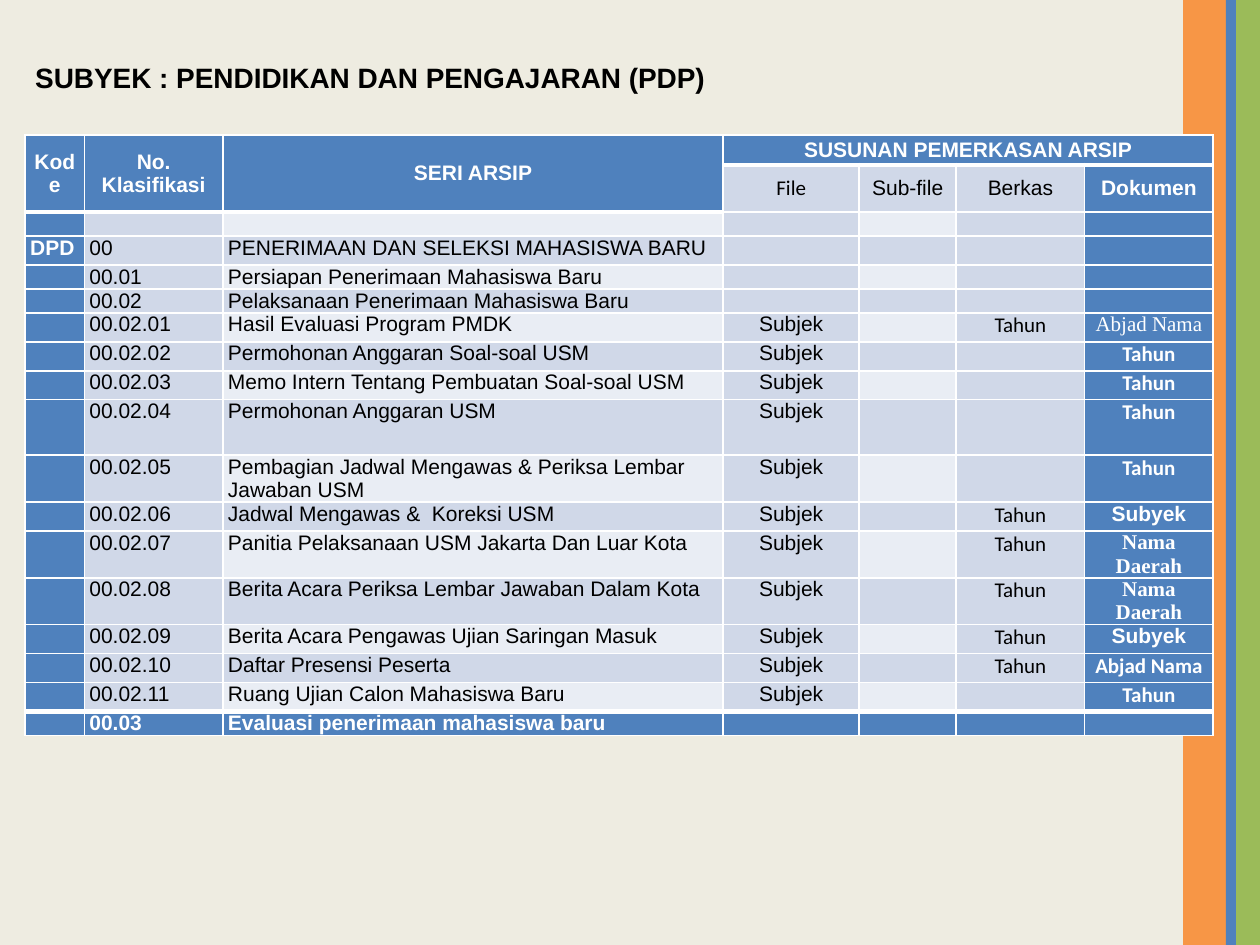
from pptx import Presentation
from pptx.dml.color import RGBColor
from pptx.enum.shapes import MSO_SHAPE as SHAPE
from pptx.enum.text import MSO_ANCHOR as ANCHOR, PP_ALIGN as ALIGN
from pptx.oxml import parse_xml
from pptx.oxml.ns import nsdecls
from pptx.util import Inches, Pt

BLUE, BAND, LIGHT = "4F81BD", "D0D8E8", "E9EDF4"
WHITE, BLACK = "FFFFFF", "000000"
ARIAL, CALIBRI, TIMES = "Arial", "Calibri", "Times New Roman"


def rgb(value):
    return RGBColor.from_string(value)


class Deck:
    """Holds the style and the current slide."""

    def __init__(self, width, height, background):
        self.prs = Presentation()
        self.prs.slide_width, self.prs.slide_height = Inches(width), Inches(height)
        self.s = self.prs.slides.add_slide(self.prs.slide_layouts[6])
        fill = self.s.background.fill
        fill.solid()
        fill.fore_color.rgb = rgb(background)

    def style(self, p, size, font=ARIAL, color=BLACK, bold=False, align=ALIGN.LEFT):
        p.alignment = align
        p.font.size, p.font.name, p.font.bold = Pt(size), font, bold
        p.font.color.rgb = rgb(color)

    def bar(self, x, width, color):
        sp = self.s.shapes.add_shape(SHAPE.RECTANGLE, Inches(x), 0,
                                     Inches(width), self.prs.slide_height)
        sp.shadow.inherit = False
        sp.fill.solid()
        sp.fill.fore_color.rgb = rgb(color)
        sp.line.fill.background()

    def text(self, x, y, width, height, text, size):
        tf = self.s.shapes.add_textbox(*map(Inches, (x, y, width, height))).text_frame
        tf.margin_left = tf.margin_right = tf.margin_top = tf.margin_bottom = 0
        tf.word_wrap, tf.vertical_anchor = True, ANCHOR.MIDDLE
        p = tf.paragraphs[0]
        p.text = text
        self.style(p, size, bold=True)

    def table(self, x, y, cols, rows):
        frame = self.s.shapes.add_table(len(rows), len(cols), Inches(x), Inches(y),
                                        Inches(sum(cols)), Inches(sum(rows)))
        for col, width in zip(frame.table.columns, cols):
            col.width = Inches(width)
        for row, height in zip(frame.table.rows, rows):
            row.height = Inches(height)
        return frame.table

    def cell(self, cell, fill, top=1, bottom=1):
        """Borders, fill and margins; an empty cell gets a small line height."""
        cell.margin_left = cell.margin_right = Inches(0.04)
        cell.margin_top = cell.margin_bottom = 0
        tc_pr = cell._tc.get_or_add_tcPr()
        for side, width in (("L", 1), ("R", 1), ("T", top), ("B", bottom)):
            tc_pr.append(parse_xml(
                f'<a:ln{side} {nsdecls("a")} w="{Pt(width)}"><a:solidFill>'
                f'<a:srgbClr val="{WHITE}"/></a:solidFill></a:ln{side}>'))
        cell.fill.solid()
        cell.fill.fore_color.rgb = rgb(fill)
        cell.text_frame.paragraphs[0]._p.get_or_add_endParaRPr().set("sz", "1000")

    def cell_text(self, cell, text, **style):
        p = cell.text_frame.paragraphs[0]
        p.add_run().text = text
        self.style(p, 12, **style)


# Number, series, file, record, then document with its font and weight
TAHUN = ("Tahun", CALIBRI, True)
SUBYEK = ("Subyek", ARIAL, True)
DAERAH = ("Nama Daerah", TIMES, True)
SERIES = [
    ("00", "PENERIMAAN DAN SELEKSI MAHASISWA BARU", "", "", None),
    ("00.01", "Persiapan Penerimaan Mahasiswa Baru", "", "", None),
    ("00.02", "Pelaksanaan Penerimaan Mahasiswa Baru", "", "", None),
    ("00.02.01", "Hasil Evaluasi Program PMDK", "Subjek", "Tahun", ("Abjad Nama", TIMES, False)),
    ("00.02.02", "Permohonan Anggaran Soal-soal USM", "Subjek", "", TAHUN),
    ("00.02.03", "Memo Intern Tentang Pembuatan Soal-soal USM", "Subjek", "", TAHUN),
    ("00.02.04", "Permohonan Anggaran USM", "Subjek", "", TAHUN),
    ("00.02.05", "Pembagian Jadwal Mengawas & Periksa Lembar Jawaban USM", "Subjek", "", TAHUN),
    ("00.02.06", "Jadwal Mengawas &  Koreksi USM", "Subjek", "Tahun", SUBYEK),
    ("00.02.07", "Panitia Pelaksanaan USM Jakarta Dan Luar Kota", "Subjek", "Tahun", DAERAH),
    ("00.02.08", "Berita Acara Periksa Lembar Jawaban Dalam Kota", "Subjek", "Tahun", DAERAH),
    ("00.02.09", "Berita Acara Pengawas Ujian Saringan Masuk", "Subjek", "Tahun", SUBYEK),
    ("00.02.10", "Daftar Presensi Peserta", "Subjek", "Tahun", ("Abjad Nama", CALIBRI, True)),
    ("00.02.11", "Ruang Ujian Calon Mahasiswa Baru", "Subjek", "", TAHUN),
    ("00.03", "Evaluasi penerimaan mahasiswa baru", "", "", None),
]
COLS = [0.47, 1.1, 3.97, 1.08, 0.77, 1.02, 1.02]
ROWS = [0.24, 0.37, 0.19, 0.23, 0.19, 0.19, 0.23, 0.23, 0.23,
        0.44, 0.37, 0.23, 0.37, 0.37, 0.23, 0.23, 0.23, 0.19]
LAST_ROW, LAST_COL = len(ROWS) - 1, len(COLS) - 1


def cell_fill(row, col):
    if row in (0, LAST_ROW) or col in (0, LAST_COL) or (row == 1 and col < 3):
        return BLUE
    return LIGHT if row > 1 and row % 2 == 0 and col in (2, 4) else BAND


def main():
    deck = Deck(10, 7.5, "EEECE1")

    # Side bars
    for x, width, color in ((9.39, 0.35, "F79646"), (9.81, 0.19, "9BBB59"), (9.73, 0.08, BLUE)):
        deck.bar(x, width, color)

    # Table grid
    table = deck.table(0.2, 1.07, COLS, ROWS)
    for row in range(len(ROWS)):
        for col in range(len(COLS)):
            below_header = row == 0 or (row == 1 and col < 3)
            deck.cell(table.cell(row, col), cell_fill(row, col),
                      top=3 if row == LAST_ROW else 1, bottom=3 if below_header else 1)

    # Header
    for col in range(3):
        table.cell(0, col).merge(table.cell(1, col))
    table.cell(0, 3).merge(table.cell(0, LAST_COL))
    headers = [(0, 0, "Kode"), (0, 1, "No. Klasifikasi"), (0, 2, "SERI ARSIP"),
               (0, 3, "SUSUNAN PEMERKASAN ARSIP"), (1, 3, "File"), (1, 4, "Sub-file"),
               (1, 5, "Berkas"), (1, 6, "Dokumen")]
    for row, col, label in headers:
        strong = cell_fill(row, col) == BLUE
        cell = table.cell(row, col)
        cell.vertical_anchor = ANCHOR.MIDDLE
        deck.cell_text(cell, label, font=CALIBRI if label == "File" else ARIAL,
                       color=WHITE if strong else BLACK, bold=strong, align=ALIGN.CENTER)

    # Archive series
    deck.cell_text(table.cell(3, 0), "DPD", color=WHITE, bold=True)
    for row, (number, series, file, record, document) in enumerate(SERIES, start=3):
        last = row == LAST_ROW
        for col, text in ((1, number), (2, series)):
            deck.cell_text(table.cell(row, col), text,
                           color=WHITE if last else BLACK, bold=last)
        for col, text, font in ((3, file, ARIAL), (5, record, CALIBRI)):
            if text:
                deck.cell_text(table.cell(row, col), text, font=font, align=ALIGN.CENTER)
        if document:
            text, font, bold = document
            deck.cell_text(table.cell(row, LAST_COL), text, font=font, color=WHITE,
                           bold=bold, align=ALIGN.CENTER)

    # Title
    deck.text(0.28, 0.48, 5.43, 0.27, "SUBYEK : PENDIDIKAN DAN PENGAJARAN (PDP)", 16)
    deck.prs.save("out.pptx")


if __name__ == "__main__":
    main()
